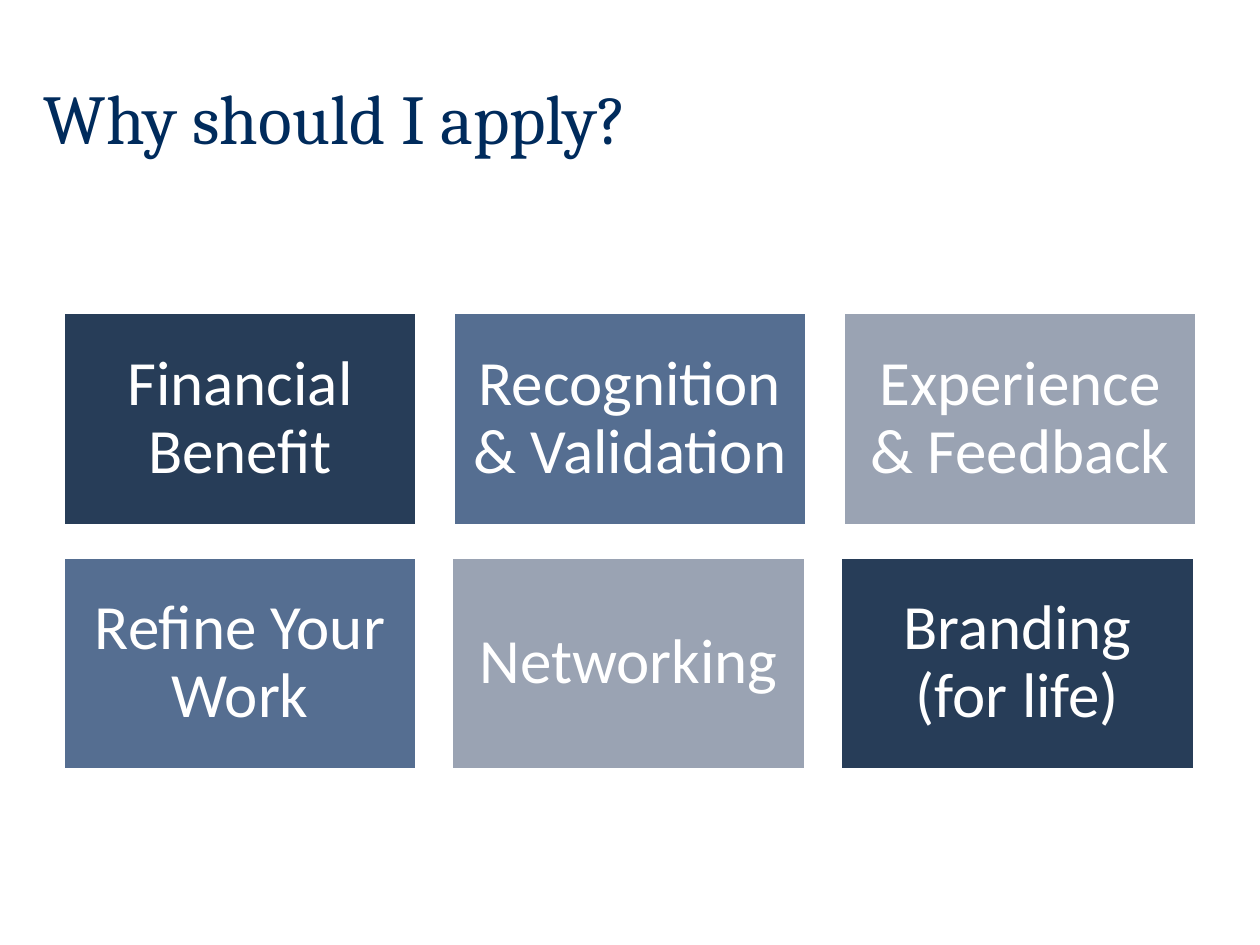
from pptx import Presentation
from pptx import util as u
from pptx.dml.color import RGBColor
from pptx.enum import shapes, text

NAVY = RGBColor(0x27, 0x3D, 0x58)
BLUE = RGBColor(0x55, 0x6E, 0x91)
GREY = RGBColor(0x9A, 0xA3, 0xB3)
WHITE = RGBColor(0xFF, 0xFF, 0xFF)
TITLE_BLUE = RGBColor(0x00, 0x2B, 0x5C)

# Card grid, in inches
GRID_LEFT = 0.5
CARD_WIDTH, CARD_HEIGHT = 2.81, 1.69
CARD_INSET = u.Inches(0.15)

# Each row: top, distance between columns, cards
ROWS = [
    (2.48, 3.095, [("Financial Benefit", NAVY),
                   ("Recognition & Validation", BLUE),
                   ("Experience & Feedback", GREY)]),
    (4.42, 3.085, [("Refine Your Work", BLUE),
                   ("Networking", GREY),
                   ("Branding (for life)", NAVY)]),
]


def add_run(paragraph, words, font_name, size, color):
    run = paragraph.add_run()
    run.text = words
    run.font.name = font_name
    run.font.size = u.Pt(size)
    run.font.color.rgb = color


def add_title(slide, words):
    box = slide.shapes.add_textbox(u.Inches(0.25), u.Inches(0.3),
                                   u.Inches(8), u.Inches(1.25))
    frame = box.text_frame
    frame.word_wrap = True
    frame.vertical_anchor = text.MSO_ANCHOR.MIDDLE
    add_run(frame.paragraphs[0], words, "Cambria", 40, TITLE_BLUE)


def add_card(slide, left, top, words, fill_color):
    card = slide.shapes.add_shape(
        shapes.MSO_SHAPE.RECTANGLE, u.Inches(left), u.Inches(top),
        u.Inches(CARD_WIDTH), u.Inches(CARD_HEIGHT))
    card.shadow.inherit = False
    card.fill.solid()
    card.fill.fore_color.rgb = fill_color
    card.line.color.rgb = WHITE
    card.line.width = u.Pt(2)

    frame = card.text_frame
    frame.word_wrap = True
    frame.vertical_anchor = text.MSO_ANCHOR.MIDDLE
    frame.margin_left = frame.margin_right = CARD_INSET
    frame.margin_top = frame.margin_bottom = CARD_INSET
    paragraph = frame.paragraphs[0]
    paragraph.alignment = text.PP_ALIGN.CENTER
    paragraph.line_spacing = 0.9
    add_run(paragraph, words, "Calibri", 36, WHITE)


def main():
    presentation = Presentation()
    presentation.slide_width = u.Inches(10)
    presentation.slide_height = u.Inches(7.5)
    slide = presentation.slides.add_slide(presentation.slide_layouts[6])

    add_title(slide, "Why should I apply?")

    # Two rows of three reasons
    for top, pitch, cards in ROWS:
        for column, (words, fill_color) in enumerate(cards):
            add_card(slide, GRID_LEFT + column * pitch, top, words, fill_color)

    presentation.save("out.pptx")


if __name__ == "__main__":
    main()
